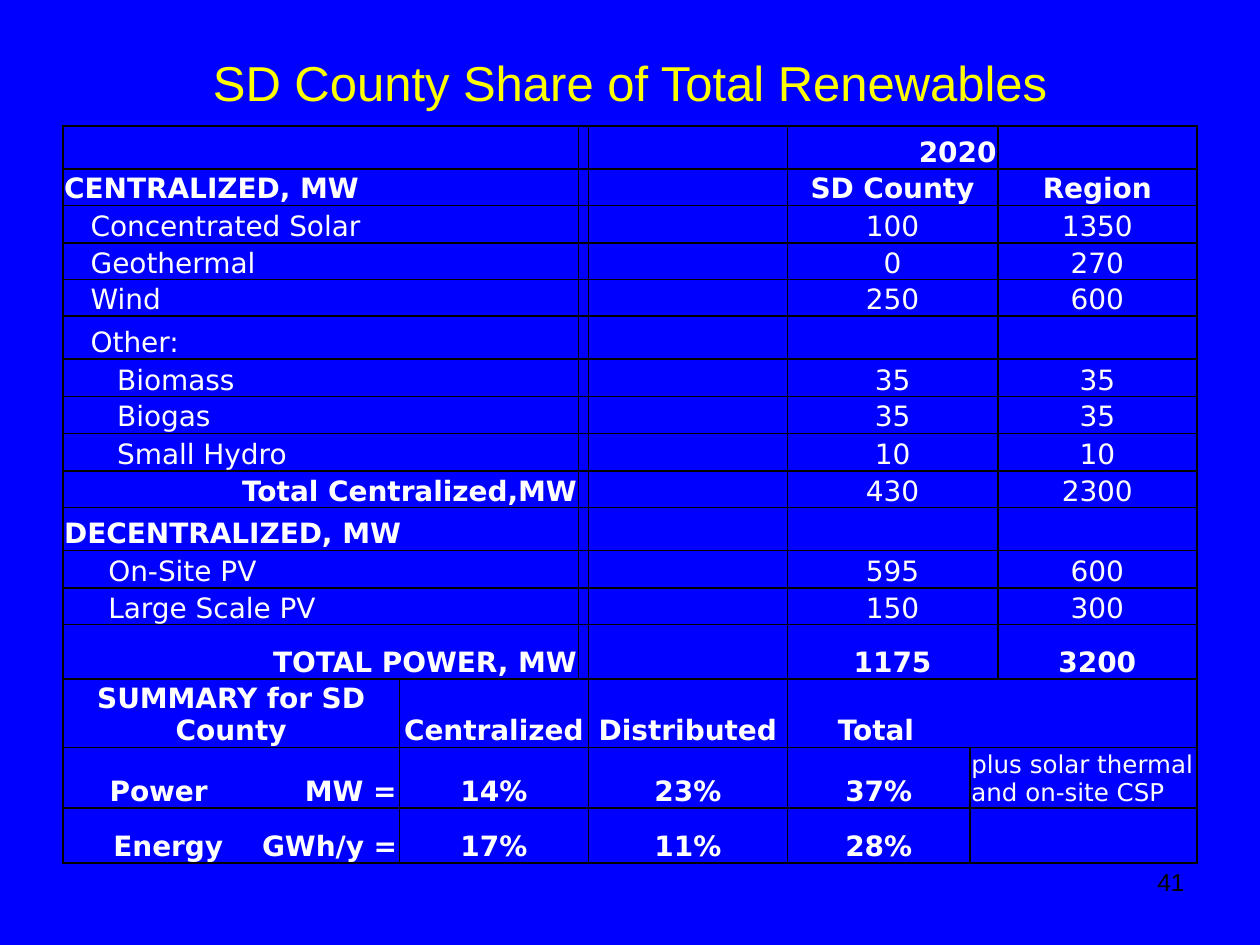
import pptx
import pptx.util
import pptx.dml.color
import pptx.enum.text
from lxml import etree
from pptx.util import Inches, Pt

RGBColor = pptx.dml.color.RGBColor
BLUE = RGBColor(0x00, 0x00, 0xFF)
YELLOW = RGBColor(0xFF, 0xFF, 0x00)
WHITE = RGBColor(0xFF, 0xFF, 0xFF)
BLACK = RGBColor(0x00, 0x00, 0x00)

ALIGN = pptx.enum.text.PP_ALIGN
ANCHOR = pptx.enum.text.MSO_ANCHOR
NS = "http://schemas.openxmlformats.org/drawingml/2006/main"

COLS = [2.67, 1.42, 0.08, 1.58, 1.45, 0.22, 1.58]
ROWS = [0.34, 0.29, 0.3, 0.29, 0.29, 0.34, 0.3, 0.29, 0.3, 0.29,
        0.34, 0.3, 0.29, 0.43, 0.52, 0.48, 0.44]
SUMMARY = 14  # first row of the summary block

# label, kind or left inset, county, region
POWER = [
    ("CENTRALIZED, MW", "head", "SD County", "Region"),
    ("Concentrated Solar", 0.22, "100", "1350"),
    ("Geothermal", 0.22, "0", "270"),
    ("Wind", 0.22, "250", "600"),
    ("Other:", 0.22, "", ""),
    ("Biomass", 0.43, "35", "35"),
    ("Biogas", 0.43, "35", "35"),
    ("Small Hydro", 0.43, "10", "10"),
    ("Total Centralized,MW", "sum", "430", "2300"),
    ("DECENTRALIZED, MW", "head", "", ""),
    ("On-Site PV", 0.36, "595", "600"),
    ("Large Scale PV", 0.36, "150", "300"),
    ("TOTAL POWER, MW", "sum", "1175", "3200"),
]
BOLD = ("SD County", "Region", "1175", "3200")

# label, left inset, tab stop, shares
SHARES = [
    ("Power\tMW =", 0.37, 1.55, ("14%", "23%", "37%")),
    ("Energy\tGWh/y =", 0.4, 1.18, ("17%", "11%", "28%")),
]


class Deck:
    def __init__(self):
        self.prs = pptx.Presentation()
        self.prs.slide_width = Inches(10)
        self.prs.slide_height = Inches(7.5)
        self.slide = self.prs.slides.add_slide(self.prs.slide_layouts[6])
        fill = self.slide.background.fill
        fill.solid()
        fill.fore_color.rgb = BLUE

    def style(self, para, face, size, color, align, bold=False):
        para.alignment = align
        font = para.font
        font.name, font.size, font.bold = face, Pt(size), bold
        font.color.rgb = color

    def text(self, box, words, size, color, align, anchor):
        frame = self.slide.shapes.add_textbox(*map(Inches, box)).text_frame
        frame.word_wrap = True
        frame.vertical_anchor = anchor
        frame.text = words
        self.style(frame.paragraphs[0], "Arial", size, color, align)

    def grid(self, left, top):
        """Add the empty table, with every cell clear and ruled."""
        self.table = self.slide.shapes.add_table(
            len(ROWS), len(COLS), Inches(left), Inches(top),
            Inches(sum(COLS)), Inches(sum(ROWS))).table
        self.table.first_row = self.table.horz_banding = False
        for col, width in zip(self.table.columns, COLS):
            col.width = Inches(width)
        for row, height in zip(self.table.rows, ROWS):
            row.height = Inches(height)
        for cell in self.table.iter_cells():
            cell.fill.background()
            cell.margin_left = cell.margin_right = Inches(0.01)
            cell.margin_top, cell.margin_bottom = Inches(0.01), 0
            cell.vertical_anchor = ANCHOR.BOTTOM
            self.rule(cell)
            # A small end mark keeps empty cells from stretching their row
            etree.SubElement(cell.text_frame.paragraphs[0]._p,
                             f"{{{NS}}}endParaRPr", sz="1200")

    def rule(self, cell):
        props = cell._tc.get_or_add_tcPr()
        for i, side in enumerate(("lnL", "lnR", "lnT", "lnB")):
            line = etree.Element(f"{{{NS}}}{side}", w=str(int(Pt(1))))
            paint = etree.SubElement(line, f"{{{NS}}}solidFill")
            etree.SubElement(paint, f"{{{NS}}}srgbClr", val=str(BLACK))
            props.insert(i, line)

    def cell(self, r, c, words="", align=ALIGN.CENTER, bold=True, span=1,
             inset=0.01, size=16):
        cell = self.table.cell(r, c)
        if span > 1:
            cell.merge(self.table.cell(r, c + span - 1))
        if words:
            cell.margin_left = Inches(inset)
            cell.text_frame.text = words
            self.style(cell.text_frame.paragraphs[0], "DejaVu Sans", size,
                       WHITE, align, bold)
        return cell

    def tab(self, cell, stop):
        props = cell.text_frame.paragraphs[0]._p.get_or_add_pPr()
        tabs = etree.Element(f"{{{NS}}}tabLst")
        etree.SubElement(tabs, f"{{{NS}}}tab", pos=str(int(Inches(stop))),
                         algn="l")
        props.insert(0, tabs)


def main():
    deck = Deck()
    deck.text((0.5, 0.3, 9, 0.7), "SD County Share of Total Renewables",
              28, YELLOW, ALIGN.CENTER, ANCHOR.MIDDLE)
    deck.grid(0.5, 1)

    deck.cell(0, 0, span=2)
    deck.cell(0, 4, "2020", ALIGN.RIGHT, span=2)
    for r, (label, kind, county, region) in enumerate(POWER, 1):
        named = kind in ("head", "sum")
        deck.cell(r, 0, label, ALIGN.RIGHT if kind == "sum" else ALIGN.LEFT,
                  named, 2, 0.01 if named else kind)
        deck.cell(r, 4, county, bold=county in BOLD, span=2)
        deck.cell(r, 6, region, bold=region in BOLD)

    deck.cell(SUMMARY, 0, "SUMMARY for SD County")
    deck.cell(SUMMARY, 1, "Centralized", span=2)
    deck.cell(SUMMARY, 3, "Distributed")
    deck.cell(SUMMARY, 4, "Total", ALIGN.LEFT, span=3, inset=0.4)
    for r, (label, inset, stop, parts) in enumerate(SHARES, SUMMARY + 1):
        deck.tab(deck.cell(r, 0, label, ALIGN.LEFT, inset=inset), stop)
        for c, span, part in zip((1, 3, 4), (2, 1, 1), parts):
            deck.cell(r, c, part, span=span)
    deck.cell(SUMMARY + 1, 5, "plus solar thermal and on-site CSP",
              ALIGN.LEFT, False, 2, size=14)
    deck.cell(SUMMARY + 2, 5, span=2)

    deck.text((7.17, 6.83, 2.33, 0.52), "41", 14, BLACK, ALIGN.RIGHT,
              ANCHOR.TOP)
    deck.prs.save("out.pptx")


if __name__ == "__main__":
    main()
